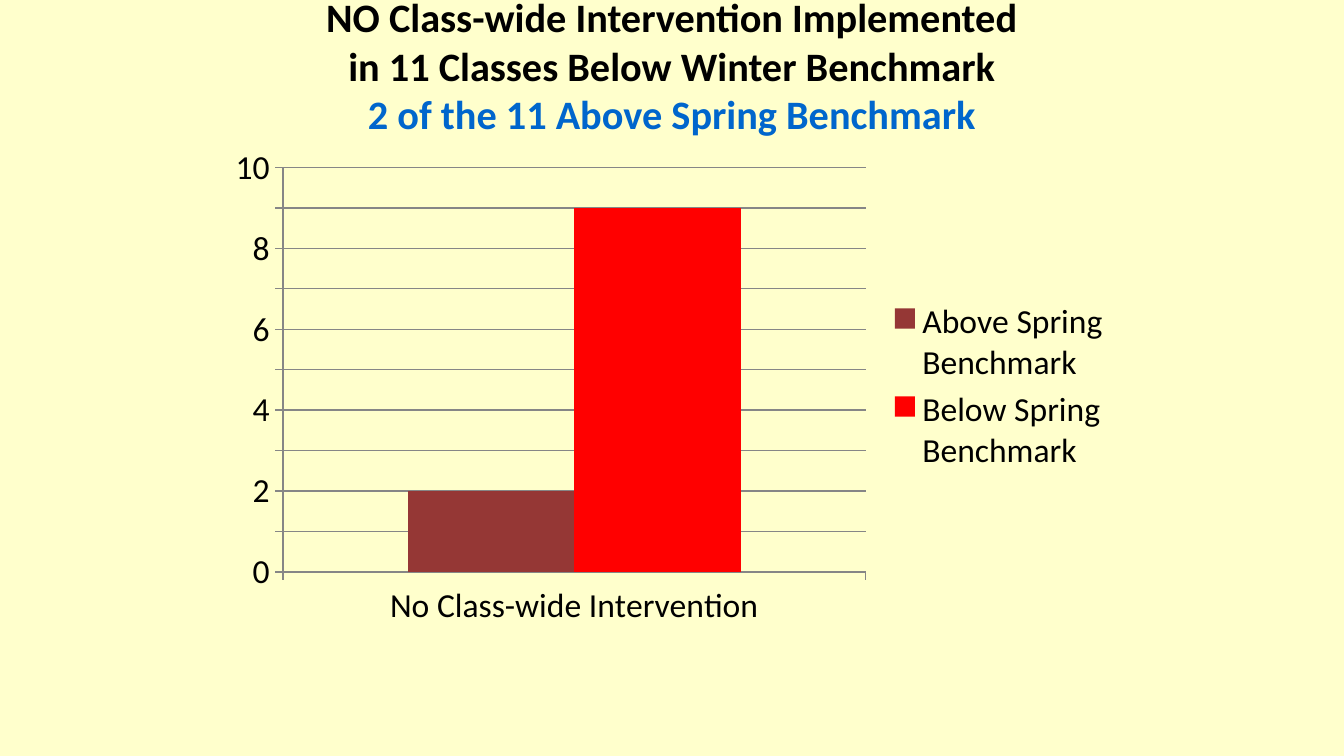
import pptx
import pptx.chart.data
import pptx.dml.color
import pptx.enum.chart
import pptx.enum.text
import pptx.util
from pptx.util import Cm

# Content
TITLE_LINES = [
    ("NO Class-wide Intervention Implemented", "000000"),
    ("in 11 Classes Below Winter Benchmark", "000000"),
    ("2 of the 11 Above Spring Benchmark", "0066CC"),
]
CATEGORIES = ["No Class-wide Intervention"]
SERIES = [
    ("Above Spring Benchmark", [2], "953735"),
    ("Below Spring Benchmark", [9], "FF0000"),
]
BACKGROUND, TEXT, AXIS = "FFFFCC", "000000", "868686"
TITLE_BOX = dict(left=Cm(1.27), top=Cm(0.03), width=Cm(22.86), height=Cm(2.39))
CHART_BOX = (Cm(4.11), Cm(2.59), Cm(17.15), Cm(9.42))


def set_values(target, values):
    for name, value in values.items():
        setattr(target, name, value)


def color(hex_value):
    return pptx.dml.color.RGBColor.from_string(hex_value)


def paint(fill, hex_value):
    fill.solid()
    fill.fore_color.rgb = color(hex_value)


def style_font(font, size, hex_value, bold=False):
    set_values(font, dict(name="Calibri", size=pptx.util.Pt(size), bold=bold))
    font.color.rgb = color(hex_value)


def style_line(line):
    line.color.rgb = color(AXIS)
    line.width = pptx.util.Pt(0.75)


# Slide
presentation = pptx.Presentation()
set_values(presentation, dict(slide_width=Cm(25.4), slide_height=Cm(14.28)))
slide = presentation.slides.add_slide(presentation.slide_layouts[5])
paint(slide.background.fill, BACKGROUND)

# Title
title = slide.shapes.title
set_values(title, TITLE_BOX)
set_values(title.text_frame, dict(
    word_wrap=True,
    auto_size=pptx.enum.text.MSO_AUTO_SIZE.NONE,
    vertical_anchor=pptx.enum.text.MSO_ANCHOR.MIDDLE,
))
paragraph = title.text_frame.paragraphs[0]
paragraph.alignment = pptx.enum.text.PP_ALIGN.CENTER
style_font(paragraph.font, 21.6, TEXT, bold=True)
for index, (line_text, hex_value) in enumerate(TITLE_LINES):
    if index:
        paragraph.add_line_break()
    run = paragraph.add_run()
    run.text = line_text
    style_font(run.font, 21.6, hex_value, bold=True)

# Chart
chart_data = pptx.chart.data.CategoryChartData()
chart_data.categories = CATEGORIES
for name, values, _ in SERIES:
    chart_data.add_series(name, values)
chart = slide.shapes.add_chart(
    pptx.enum.chart.XL_CHART_TYPE.COLUMN_CLUSTERED, *CHART_BOX, chart_data
).chart
style_font(chart.font, 18, TEXT)
set_values(chart, dict(has_title=False, has_legend=True))
set_values(chart.legend, dict(
    position=pptx.enum.chart.XL_LEGEND_POSITION.RIGHT, include_in_layout=False
))

plot = chart.plots[0]
set_values(plot, dict(gap_width=150, overlap=0, vary_by_categories=False))
for series, (_, _, hex_value) in zip(plot.series, SERIES):
    paint(series.format.fill, hex_value)

# Axes
set_values(chart.value_axis, dict(
    minimum_scale=0, maximum_scale=10, major_unit=1, has_major_gridlines=True
))
style_line(chart.value_axis.major_gridlines.format.line)
for axis in (chart.category_axis, chart.value_axis):
    axis.major_tick_mark = pptx.enum.chart.XL_TICK_MARK.OUTSIDE
    style_line(axis.format.line)

presentation.save("out.pptx")
